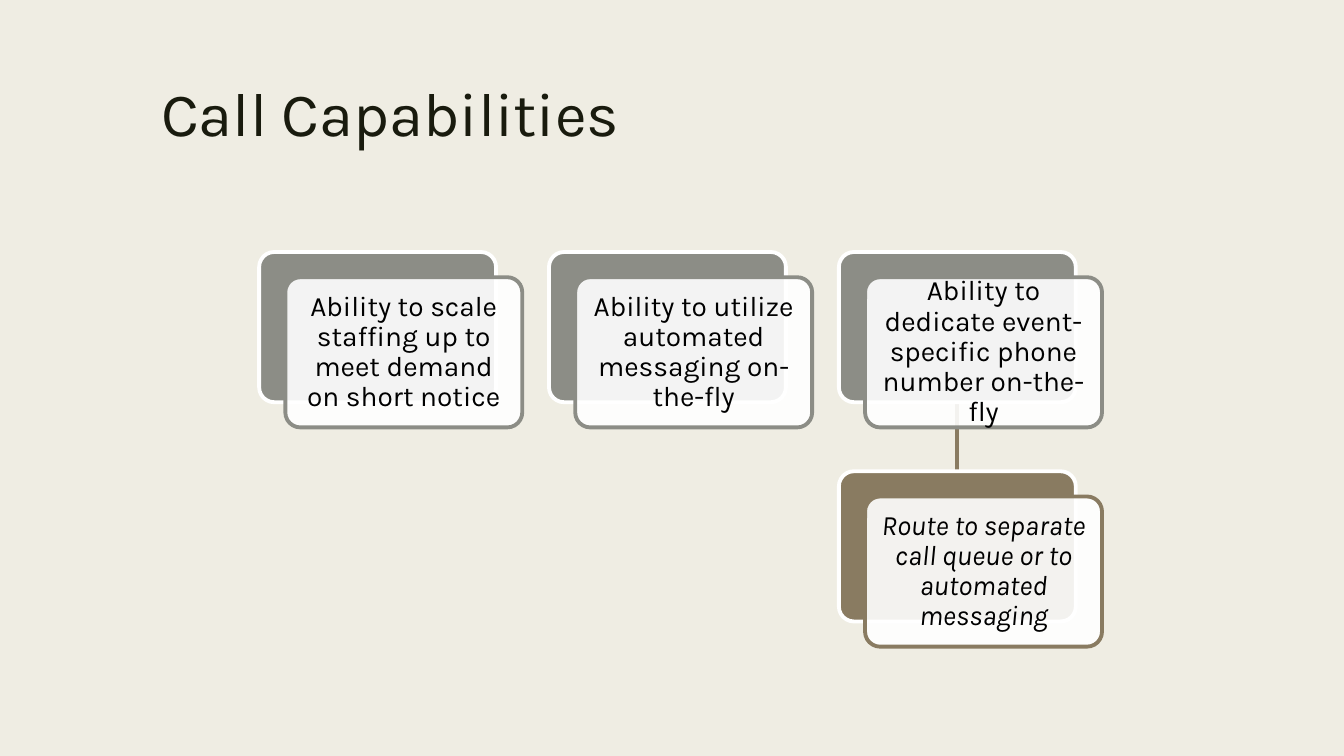
"""Build the Call Capabilities slide: three layered cards and one follow-up card."""
import pptx
import pptx.util
import pptx.dml.color
import pptx.enum.shapes
import pptx.enum.text
import pptx.oxml.ns
import lxml.etree

INCH = pptx.util.Inches
ANCHOR = pptx.enum.text.MSO_ANCHOR
ALIGN = pptx.enum.text.PP_ALIGN


def paint(color_format, hex_color, opacity=100):
    if hasattr(color_format, "solid"):
        color_format.solid()
        color_format = color_format.fore_color
    color_format.rgb = pptx.dml.color.RGBColor.from_string(hex_color)
    if opacity < 100:
        tint = color_format._xFill.find(pptx.oxml.ns.qn("a:srgbClr"))
        alpha = lxml.etree.SubElement(tint, pptx.oxml.ns.qn("a:alpha"))
        alpha.set("val", str(opacity * 1000))


def write(frame, text, size=20, color="000000", italic=False, align=ALIGN.CENTER,
          anchor=ANCHOR.MIDDLE, spacing=0.9, inset=0.08):
    frame.word_wrap = True
    frame.vertical_anchor = anchor
    frame.margin_left = frame.margin_right = INCH(inset)
    frame.margin_top = frame.margin_bottom = INCH(min(inset, 0.08))
    paragraph = frame.paragraphs[0]
    paragraph.alignment = align
    paragraph.line_spacing = spacing
    run = paragraph.add_run()
    run.text = text
    run.font.name = "Karla"
    run.font.size = pptx.util.Pt(size)
    run.font.italic = italic
    paint(run.font.color, color)


deck = pptx.Presentation()
deck.slide_width, deck.slide_height = INCH(13.33), INCH(7.5)
slide = deck.slides.add_slide(deck.slide_layouts[6])
paint(slide.background.fill, "EFEDE3")

title = slide.shapes.add_textbox(INCH(1.5), INCH(0.75), INCH(10.5), INCH(1.62))
write(title.text_frame, "Call Capabilities", size=44, color="191B0E",
      align=ALIGN.LEFT, anchor=ANCHOR.TOP, spacing=0.89, inset=0.1)

GRAY, BROWN, WHITE = "8C8D86", "897B61", "FFFFFF"
LEFT, TOP = 2.57, 2.5
COLUMN, ROW = 2.875, 2.175
CARD_WIDTH, CARD_HEIGHT = 2.35, 1.49
SHIFT_X, SHIFT_Y = 0.26, 0.25

branch_x = LEFT + 2 * COLUMN + CARD_WIDTH / 2
branch = slide.shapes.add_connector(
    pptx.enum.shapes.MSO_CONNECTOR.STRAIGHT,
    INCH(branch_x), INCH(TOP + CARD_HEIGHT), INCH(branch_x), INCH(TOP + ROW))
paint(branch.line.fill, BROWN)
branch.line.width = pptx.util.Pt(2.75)
lxml.etree.SubElement(branch._element.spPr, pptx.oxml.ns.qn("a:effectLst"))

capabilities = [
    (0, 0, GRAY, "Ability to scale staffing up to meet demand on short notice"),
    (1, 0, GRAY, "Ability to utilize automated messaging on-the-fly"),
    (2, 0, GRAY, "Ability to dedicate event-specific phone number on-the-fly"),
    (2, 1, BROWN, "Route to separate call queue or to automated messaging"),
]
for column, row, accent, capability in capabilities:
    layers = [(0, accent, 100, WHITE), (1, WHITE, 90, accent)]
    for depth, fill, opacity, outline in layers:
        card = slide.shapes.add_shape(
            pptx.enum.shapes.MSO_SHAPE.ROUNDED_RECTANGLE,
            INCH(LEFT + column * COLUMN + depth * SHIFT_X),
            INCH(TOP + row * ROW + depth * SHIFT_Y),
            INCH(CARD_WIDTH), INCH(CARD_HEIGHT))
        card.adjustments[0] = 0.1
        card.shadow.inherit = False
        paint(card.fill, fill, opacity)
        paint(card.line.fill, outline)
        card.line.width = pptx.util.Pt(2.75)
    write(card.text_frame, capability, italic=row == 1)

deck.save("out.pptx")
